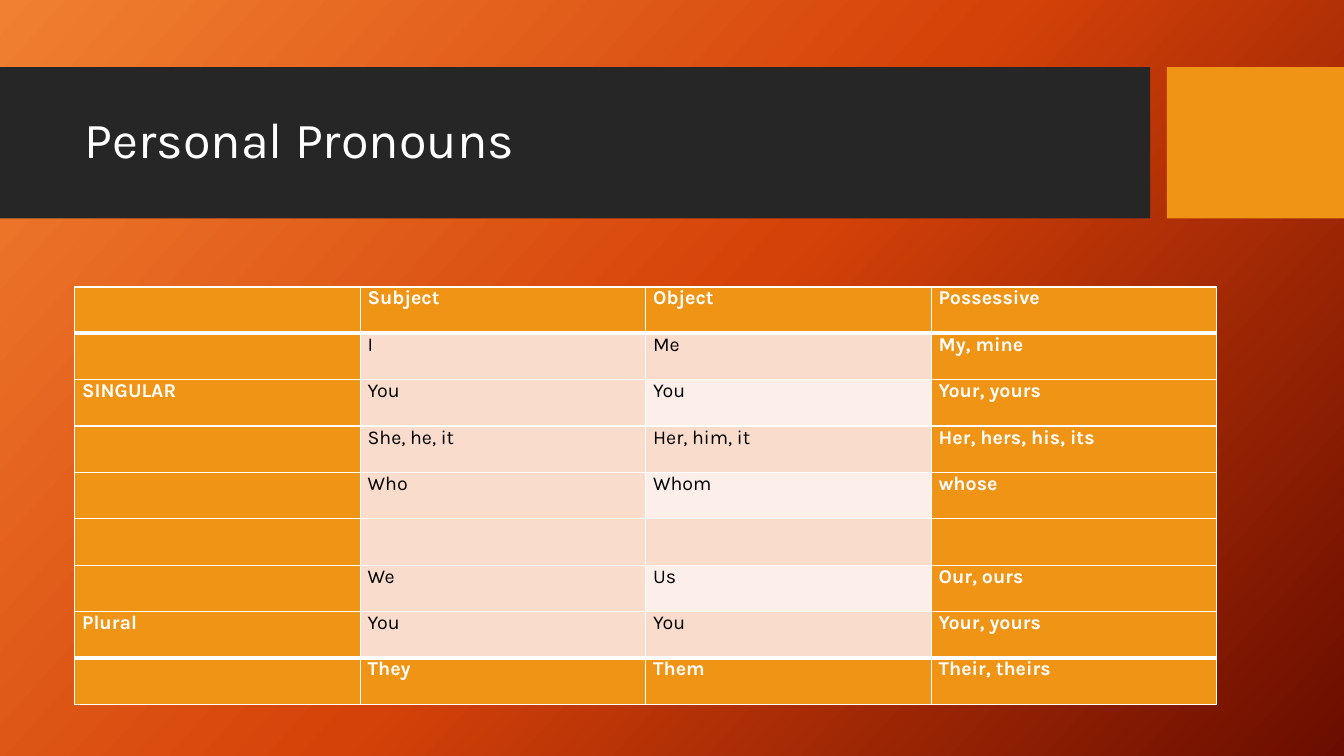
from dataclasses import dataclass

from lxml.etree import SubElement
from pptx import Presentation
from pptx.dml.color import RGBColor
from pptx.enum.shapes import MSO_SHAPE
from pptx.enum.text import MSO_ANCHOR, MSO_AUTO_SIZE, PP_ALIGN
from pptx.oxml.ns import qn
from pptx.slide import Slide
from pptx.table import _Cell
from pptx.text.text import Font
from pptx.util import Pt

FONT = "Karla"
WHITE, BLACK, CHARCOAL = "FFFFFF", "000000", "262626"
ORANGE, PEACH, PALE_PEACH = "F09415", "F9DCCC", "FCEEE8"
BACKGROUND_STOPS = [(0, "F18031"), (50, "D54209"), (100, "6A0D00")]
BACKGROUND_ANGLE = 42

PRONOUNS = [
    ("", "Subject", "Object", "Possessive"),
    ("", "I", "Me", "My, mine"),
    ("SINGULAR", "You", "You", "Your, yours"),
    ("", "She, he, it", "Her, him, it", "Her, hers, his, its"),
    ("", "Who", "Whom", "whose"),
    ("", "", "", ""),
    ("", "We", "Us", "Our, ours"),
    ("Plural", "You", "You", "Your, yours"),
    ("", "They", "Them", "Their, theirs"),
]
LAST_ROW, LAST_COLUMN = len(PRONOUNS) - 1, len(PRONOUNS[0]) - 1
COLUMN_WIDTH, ROW_HEIGHT = 203.94, 33.12
THIN, THICK = 1, 3


@dataclass
class Band:
    left: float
    width: float
    color: str


BANDS = [Band(0, 821.5, CHARCOAL), Band(833.5, 126.5, ORANGE)]


def rgb(color: str) -> RGBColor:
    return RGBColor.from_string(color)


def format_font(font: Font, size: float, color: str, bold: bool = False) -> None:
    font.name = FONT
    font.size = Pt(size)
    font.bold = bold
    font.color.rgb = rgb(color)


def paint_background(slide: Slide) -> None:
    fill = slide.background.fill
    fill.gradient()
    fill.gradient_angle = 360 - BACKGROUND_ANGLE  # counted anticlockwise
    stops = slide.element.find(".//" + qn("a:gsLst"))
    for stop in list(stops):
        stops.remove(stop)
    for percent, color in BACKGROUND_STOPS:
        stop = SubElement(stops, qn("a:gs"), pos=str(percent * 1000))
        SubElement(stop, qn("a:srgbClr"), val=color)


def add_band(slide: Slide, band: Band) -> None:
    """Draw a header band behind the title."""
    shape = slide.shapes.add_shape(
        MSO_SHAPE.RECTANGLE, Pt(band.left), Pt(48), Pt(band.width), Pt(108))
    shape.shadow.inherit = False
    shape.fill.solid()
    shape.fill.fore_color.rgb = rgb(band.color)
    shape.line.fill.background()
    slide.shapes.title.element.addprevious(shape.element)


def add_title(slide: Slide, wording: str) -> None:
    title = slide.shapes.title
    title.left, title.top, title.width, title.height = Pt(53.5), Pt(59), Pt(756.5), Pt(85)
    frame = title.text_frame
    frame.text = wording
    frame.word_wrap = True
    frame.auto_size = MSO_AUTO_SIZE.NONE
    frame.vertical_anchor = MSO_ANCHOR.MIDDLE
    paragraph = frame.paragraphs[0]
    paragraph.alignment = PP_ALIGN.LEFT
    paragraph.line_spacing = 0.9
    format_font(paragraph.runs[0].font, 36, WHITE)


def set_borders(cell: _Cell, row: int) -> None:
    """Rule the cell in white, heavier next to the first and last rows."""
    top = THICK if row in (1, LAST_ROW) else THIN
    bottom = THICK if row in (0, LAST_ROW - 1) else THIN
    properties = cell._tc.get_or_add_tcPr()
    for side, width in (("L", THIN), ("R", THIN), ("T", top), ("B", bottom)):
        line = SubElement(properties, qn(f"a:ln{side}"), w=str(Pt(width)))
        SubElement(SubElement(line, qn("a:solidFill")), qn("a:srgbClr"), val=WHITE)


def fill_color(row: int, column: int) -> str:
    if row in (0, LAST_ROW) or column in (0, LAST_COLUMN):
        return ORANGE
    return PALE_PEACH if column == 2 and row % 2 == 0 else PEACH


def format_cell(cell: _Cell, row: int, column: int, wording: str) -> None:
    color = fill_color(row, column)
    emphasized = color == ORANGE
    set_borders(cell, row)
    cell.fill.solid()
    cell.fill.fore_color.rgb = rgb(color)
    cell.margin_left = cell.margin_right = Pt(5.2)
    cell.margin_top = cell.margin_bottom = Pt(0)
    paragraph = cell.text_frame.paragraphs[0]
    paragraph.text = wording
    format_font(paragraph.font, 14, WHITE if emphasized else BLACK, emphasized)
    for run in paragraph.runs:
        format_font(run.font, 14, WHITE if emphasized else BLACK, emphasized)


def add_pronoun_table(slide: Slide) -> None:
    rows, columns = len(PRONOUNS), len(PRONOUNS[0])
    table = slide.shapes.add_table(
        rows, columns, Pt(53.5), Pt(205),
        Pt(columns * COLUMN_WIDTH), Pt(rows * ROW_HEIGHT)).table
    table.first_row = table.horz_banding = False
    for column in table.columns:
        column.width = Pt(COLUMN_WIDTH)
    for row in table.rows:
        row.height = Pt(ROW_HEIGHT)
    for row, wordings in enumerate(PRONOUNS):
        for column, wording in enumerate(wordings):
            format_cell(table.cell(row, column), row, column, wording)


def main() -> None:
    presentation = Presentation()
    presentation.slide_width, presentation.slide_height = Pt(960), Pt(540)
    slide = presentation.slides.add_slide(presentation.slide_layouts.get_by_name("Title Only"))
    paint_background(slide)
    for band in BANDS:
        add_band(slide, band)
    add_title(slide, "Personal Pronouns")
    add_pronoun_table(slide)
    presentation.save("out.pptx")


if __name__ == "__main__":
    main()
